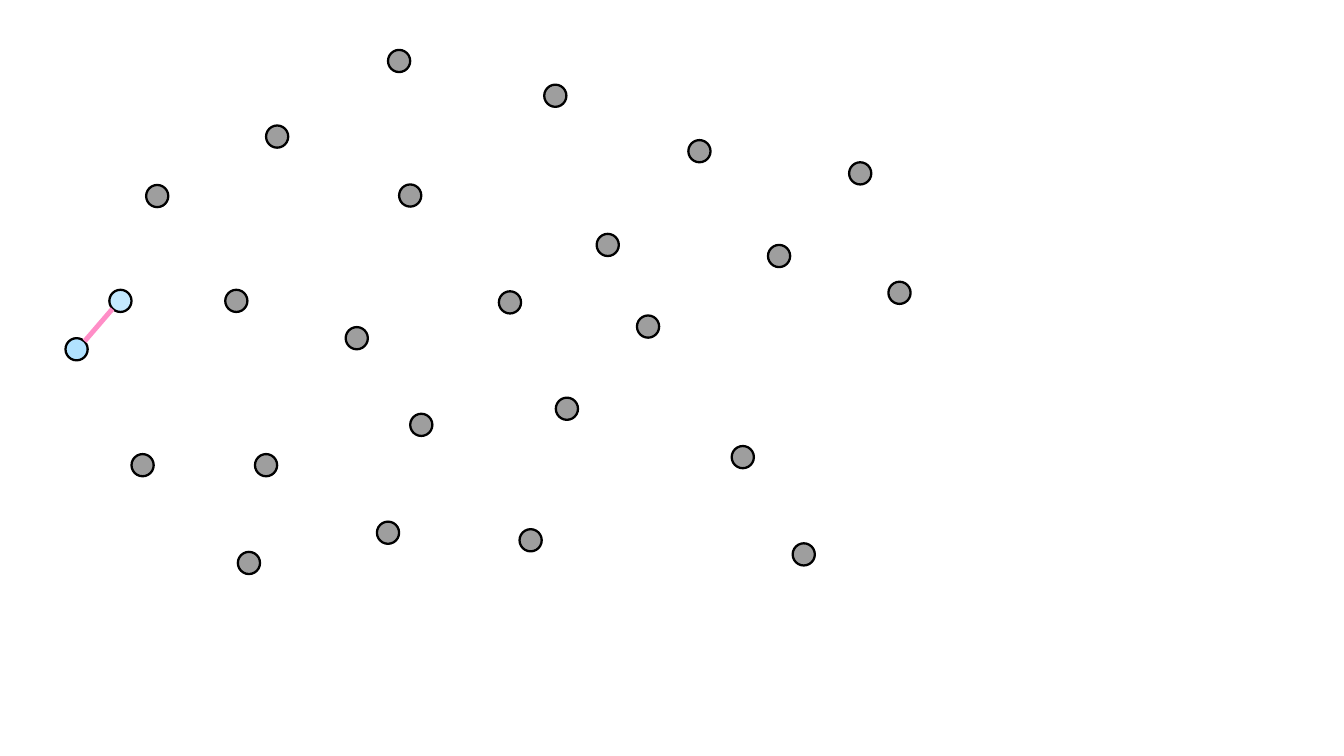
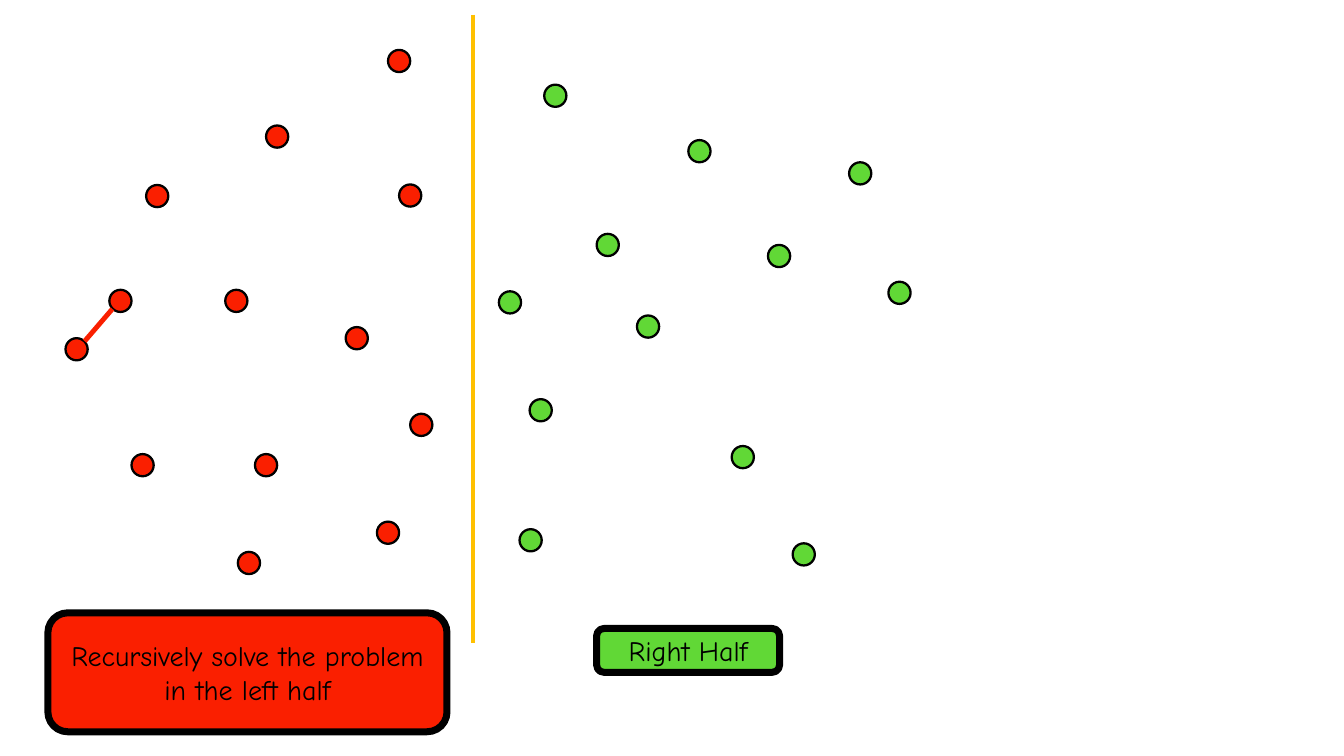
"""Build two slides on the closest pair problem: the point set and its two halves."""
from lxml import etree
from pptx import Presentation
from pptx.dml.color import RGBColor
from pptx.enum import shapes, text
from pptx.oxml import ns
from pptx.util import Inches, Pt

BLACK, WHITE, SKY, PINK = "000000", "FFFFFF", "66C7FF", "FF8EC7"
RED, GREEN, GOLD = "FA1F00", "61D836", "FFC000"
DOT = Inches(0.44)
DIVIDER_X = 9.39

POINTS = [
    (7.7, 0.99), (5.28, 2.49), (7.92, 3.66), (2.9, 3.67), (10.8, 1.68),
    (4.47, 5.75), (6.86, 6.49), (2.17, 5.75), (8.14, 8.21), (1.3, 6.71),
    (2.61, 9.01), (5.06, 9.01), (16.85, 3.22), (13.66, 2.78), (15.24, 4.86),
    (17.63, 5.59), (11.84, 4.64), (12.64, 6.26), (9.9, 5.78), (11.03, 7.89),
    (14.52, 8.85), (4.72, 10.95), (7.48, 10.35), (10.31, 10.5), (15.73, 10.78),
]
MOVED = {(11.03, 7.89): (10.51, 7.92)}
CLOSEST_PAIR_OPACITY = {(2.17, 5.75): 38, (1.3, 6.71): 51}
PAIR_LINK = (1.68, 6.77, 2.23, 6.13)
DIVIDER = (DIVIDER_X, 0.29, DIVIDER_X, 12.76)


def paint(item, line, width, fill=None, opacity=100):
    """Colour a shape, or a connector when no fill is given, and drop its shadow."""
    item.line.color.rgb = RGBColor.from_string(line)
    item.line.width = Pt(width)
    if fill is None:
        etree.SubElement(item._element.spPr, ns.qn("a:effectLst"))
        return
    item.shadow.inherit = False
    item.fill.solid()
    item.fill.fore_color.rgb = RGBColor.from_string(fill)
    if opacity < 100:
        color = item._element.spPr.find(ns.qn("a:solidFill"))[0]
        etree.SubElement(color, ns.qn("a:alpha"), val=str(opacity * 1000))


def write(box, words, size=40, font="Comic Neue", color=BLACK, inset=0.06):
    """Put centred text into a shape."""
    frame = box.text_frame
    frame.word_wrap = True
    frame.auto_size = text.MSO_AUTO_SIZE.SHAPE_TO_FIT_TEXT
    frame.vertical_anchor = text.MSO_ANCHOR.MIDDLE
    frame.margin_left = frame.margin_right = Inches(inset)
    frame.margin_top = frame.margin_bottom = Inches(inset)
    paragraph = frame.paragraphs[0]
    paragraph.alignment = text.PP_ALIGN.CENTER
    run = paragraph.add_run()
    run.text = words
    run.font.size = Pt(size)
    run.font.name = font
    run.font.color.rgb = RGBColor.from_string(color)


deck = Presentation()
deck.slide_width, deck.slide_height = Inches(26.67), Inches(15)
blank = deck.slide_layouts[6]
whole_set, halves = [deck.slides.add_slide(blank) for _ in range(2)]
for slide in (whole_set, halves):
    slide.background.fill.solid()
    slide.background.fill.fore_color.rgb = RGBColor.from_string(WHITE)

for point in POINTS:
    left, top = point
    dot = whole_set.shapes.add_shape(
        shapes.MSO_SHAPE.OVAL, Inches(left), Inches(top), DOT, DOT)
    paint(dot, BLACK, 3.25, SKY if point in CLOSEST_PAIR_OPACITY else BLACK,
          CLOSEST_PAIR_OPACITY.get(point, 38))

    left, top = MOVED.get(point, point)
    dot = halves.shapes.add_shape(
        shapes.MSO_SHAPE.OVAL, Inches(left), Inches(top), DOT, DOT)
    paint(dot, BLACK, 3.25, RED if left < DIVIDER_X else GREEN)

for words, place, fill in [
    ("Recursively solve the problem in the left half", (0.95, 12.16, 7.92, 2.36), RED),
    ("Right Half", (11.84, 12.47, 3.63, 0.87), GREEN),
]:
    half_label = halves.shapes.add_shape(
        shapes.MSO_SHAPE.ROUNDED_RECTANGLE, *map(Inches, place))
    paint(half_label, BLACK, 10, fill)
    write(half_label, words)

for slide, ends, color, width in [
    (whole_set, PAIR_LINK, PINK, 7),
    (halves, PAIR_LINK, RED, 7),
    (halves, DIVIDER, GOLD, 5.75),
]:
    link = slide.shapes.add_connector(shapes.MSO_CONNECTOR.STRAIGHT, *map(Inches, ends))
    paint(link, color, width)

deck.save("out.pptx")
